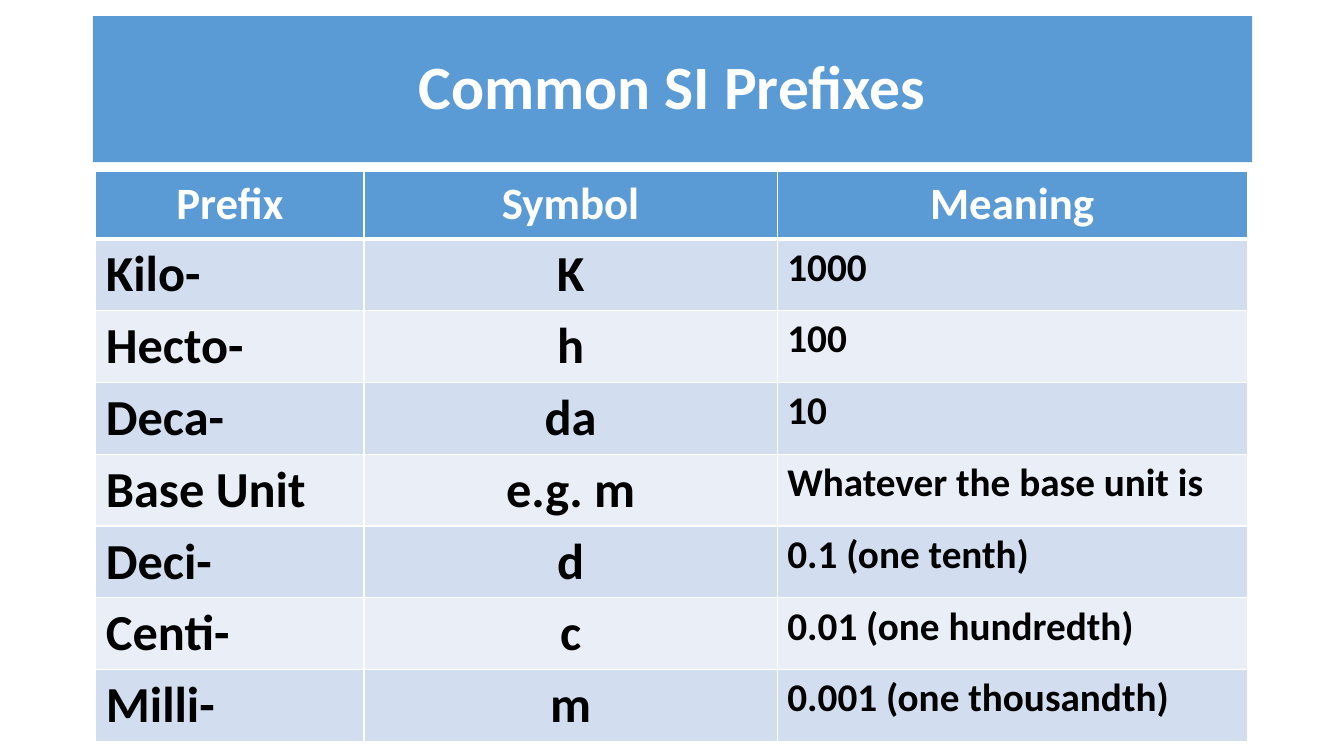
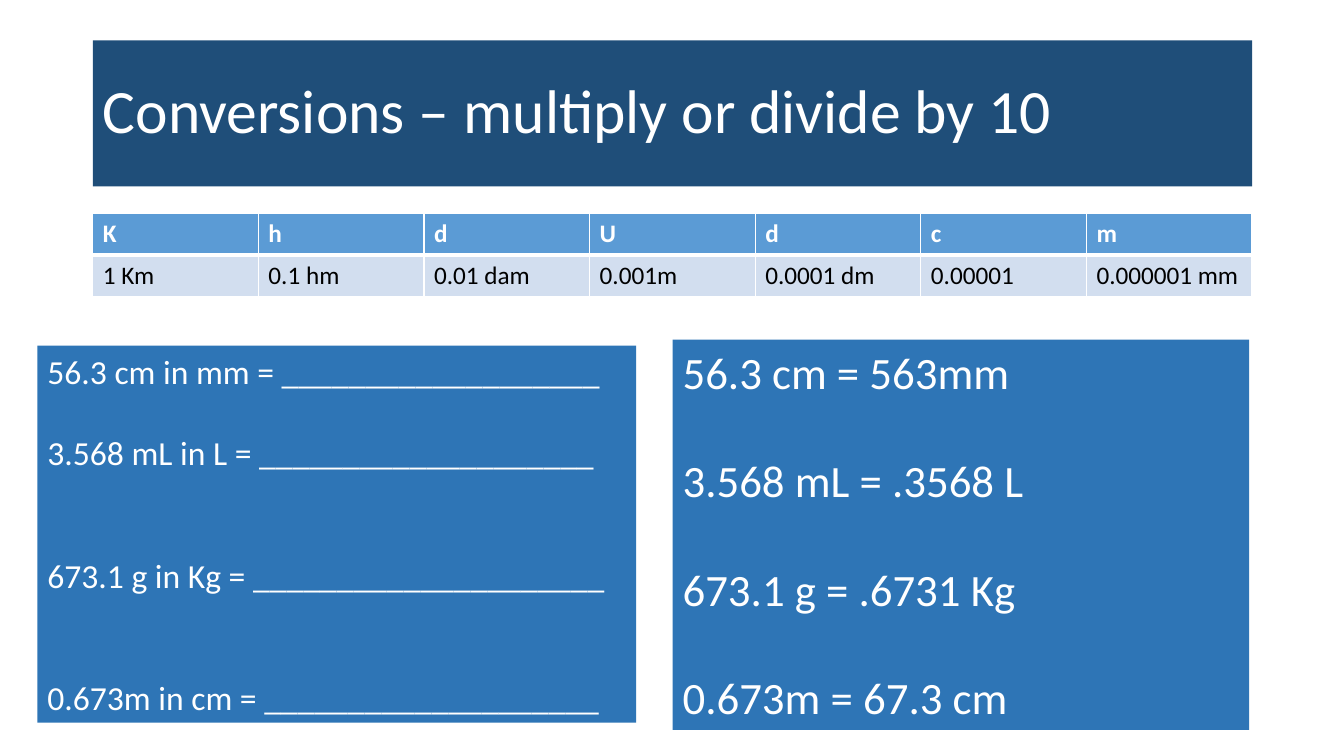
"""Build two slides on SI prefixes and metric conversions."""
from lxml import etree
from pptx import Presentation
from pptx.dml.color import RGBColor
from pptx.enum.text import MSO_ANCHOR, MSO_AUTO_SIZE, PP_ALIGN
from pptx.oxml.ns import qn
from pptx.util import Inches, Pt

LEFT, CENTER = PP_ALIGN.LEFT, PP_ALIGN.CENTER
TOP, MIDDLE = MSO_ANCHOR.TOP, MSO_ANCHOR.MIDDLE
FIXED = MSO_AUTO_SIZE.NONE
TITLE_ONLY, TWO_CONTENT = 5, 3

COLORS = {
    "white": "FFFFFF",
    "black": "000000",
    "accent": "5B9BD5",
    "navy": "1F4E79",
    "panel": "2E75B6",
    "band": "D2DEEF",
    "pale band": "EAEFF7",
}
FONT = "Calibri"
LINE_HEIGHT = 1.22


class Deck:
    def __init__(self):
        self.prs = Presentation()
        self.prs.slide_width, self.prs.slide_height = Inches(13.33), Inches(7.5)
        self.slide = None

    def add_slide(self, layout):
        self.slide = self.prs.slides.add_slide(self.prs.slide_layouts[layout])

    def fill(self, target, color):
        target.fill.solid()
        target.fill.fore_color.rgb = RGBColor.from_string(COLORS[color])

    def add_text(self, paragraph, text, size, color="white", bold=False, **layout):
        run = paragraph.add_run()
        run.text = text
        run.font.color.rgb = RGBColor.from_string(COLORS[color])
        font_format = {"name": FONT, "size": Pt(size), "bold": bold}
        for target, values in ((run.font, font_format), (paragraph, layout)):
            for name, value in values.items():
                setattr(target, name, value)

    def place(self, holder, box, color, anchor):
        for name, value in zip(("left", "top", "width", "height"), box):
            setattr(holder, name, Inches(value))
        self.fill(holder, color)
        frame_format = {"auto_size": FIXED, "word_wrap": True, "vertical_anchor": anchor}
        for name, value in frame_format.items():
            setattr(holder.text_frame, name, value)
        return holder.text_frame

    def title(self, text, top, color, align=LEFT, bold=False):
        frame = self.place(self.slide.shapes.title, (0.92, top, 11.5, 1.45), color, MIDDLE)
        self.add_text(frame.paragraphs[0], text, 44, bold=bold, alignment=align, line_spacing=0.9)

    def lines(self, index, box, size, entries):
        frame = self.place(self.slide.placeholders[index], box, "panel", TOP)
        for number, (text, skipped) in enumerate(entries):
            paragraph = frame.add_paragraph() if number else frame.paragraphs[0]
            properties = paragraph._p.get_or_add_pPr()
            properties.set("marL", "0")
            properties.set("indent", "0")
            etree.SubElement(properties, qn("a:buNone"))
            gap = Pt(round(skipped * size * LINE_HEIGHT, 1))
            self.add_text(paragraph, text, size, alignment=LEFT, line_spacing=1.0,
                          space_before=gap, space_after=Pt(0))

    def borders(self, cell, row):
        widths = {"L": 1, "R": 1, "T": 3 if row == 1 else 1, "B": 1 if row else 3}
        for side, width in widths.items():
            line = etree.SubElement(cell._tc.get_or_add_tcPr(), qn(f"a:ln{side}"), w=str(Pt(width)))
            solid = etree.SubElement(line, qn("a:solidFill"))
            etree.SubElement(solid, qn("a:srgbClr"), val=COLORS["white"])

    def table(self, left, top, widths, row_height, rows, header, columns):
        table = self.slide.shapes.add_table(
            len(rows), len(widths), Inches(left), Inches(top),
            Inches(sum(widths)), Inches(row_height * len(rows))).table
        for column, width in zip(table.columns, widths):
            column.width = Inches(width)
        for row, texts in enumerate(rows):
            table.rows[row].height = Inches(row_height)
            color = ("band" if row % 2 else "pale band") if row else "accent"
            for column, text in enumerate(texts):
                cell = table.cell(row, column)
                self.borders(cell, row)
                self.fill(cell, color)
                style = columns[column] if row else header
                self.add_text(cell.text_frame.paragraphs[0], text, **style)


def prefixes_slide(deck):
    deck.add_slide(TITLE_ONLY)
    deck.title("Common SI Prefixes", 0.16, "accent", CENTER, bold=True)
    prefixes = [
        ("Prefix", "Symbol", "Meaning"),
        ("Kilo-", "K", "1000"),
        ("Hecto-", "h", "100"),
        ("Deca-", "da", "10"),
        ("Base Unit", "e.g. m", "Whatever the base unit is"),
        ("Deci-", "d", "0.1 (one tenth)"),
        ("Centi-", "c", "0.01 (one hundredth)"),
        ("Milli-", "m", "0.001 (one thousandth)"),
    ]
    header = {"size": 32, "bold": True, "alignment": CENTER}
    columns = [
        {"size": size, "color": "black", "bold": True, "alignment": align}
        for size, align in ((36, LEFT), (36, CENTER), (28, LEFT))
    ]
    deck.table(0.95, 1.7, (2.66, 4.1, 4.66), 0.67, prefixes, header, columns)


def conversions_slide(deck):
    deck.add_slide(TWO_CONTENT)
    deck.title("Conversions – multiply or divide by 10", 0.4, "navy")
    units = [
        ("K", "h", "d", "U", "d", "c", "m"),
        ("1 Km", "0.1 hm", "0.01 dam", "0.001m", "0.0001 dm", "0.00001", "0.000001 mm"),
    ]
    unit_count = len(units[0])
    deck.table(0.92, 2.12, [11.5 / unit_count] * unit_count, 0.41, units,
               {"size": 18, "bold": True}, [{"size": 18, "color": "black"}] * unit_count)
    questions = [
        ("56.3 cm in mm = ___________________", 0),
        ("3.568 mL in L = ____________________", 1),
        ("673.1 g in Kg = _____________________", 2),
        ("0.673m in cm = ____________________", 2),
    ]
    answers = [
        ("56.3 cm = 563mm", 0),
        ("3.568 mL = .3568 L", 1),
        ("673.1 g = .6731 Kg", 1),
        ("0.673m = 67.3 cm", 1),
    ]
    deck.lines(1, (0.37, 3.43, 5.94, 3.74), 24, questions)
    deck.lines(2, (6.67, 3.37, 5.72, 3.87), 32, answers)


def main():
    deck = Deck()
    prefixes_slide(deck)
    conversions_slide(deck)
    deck.prs.save("out.pptx")


if __name__ == "__main__":
    main()
